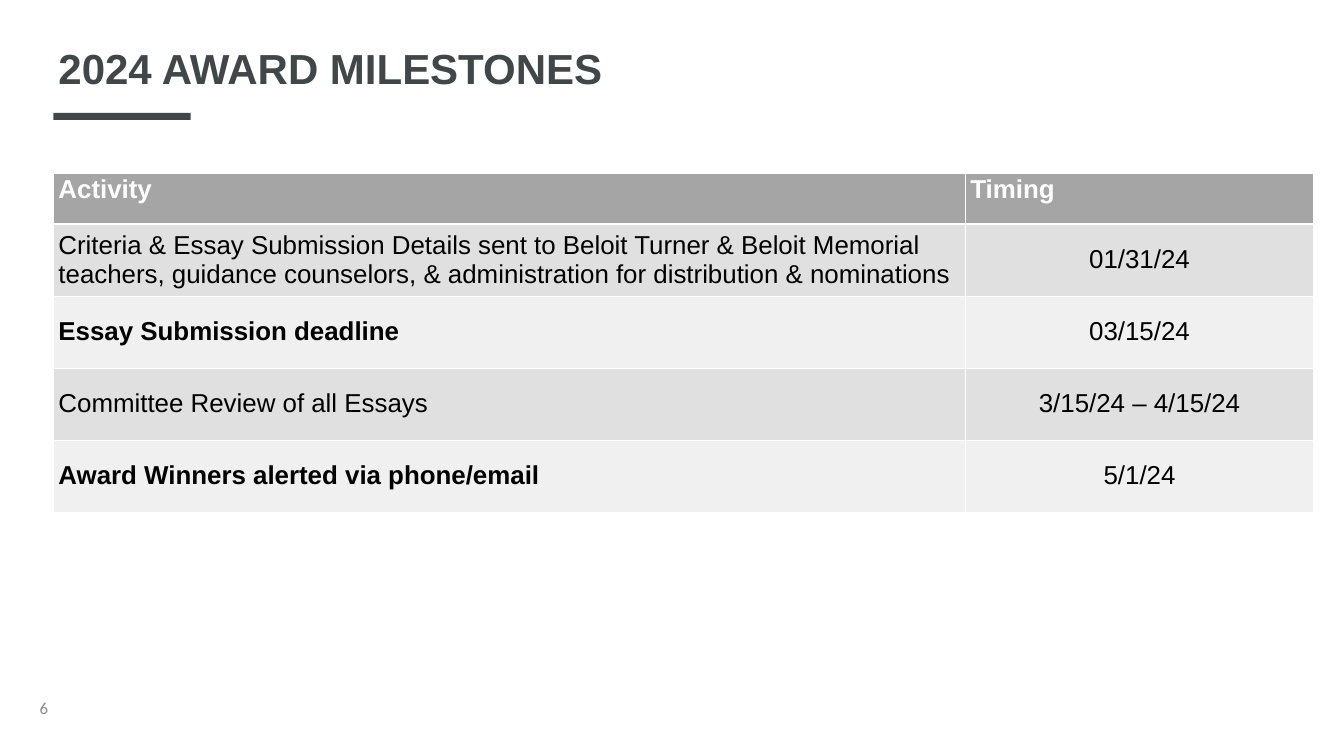
from lxml.etree import SubElement as Sub
from pptx import Presentation
from pptx.dml.color import RGBColor
from pptx.enum.shapes import MSO_SHAPE as Shape
from pptx.enum.text import MSO_ANCHOR as Anchor, PP_ALIGN as Align
from pptx.oxml.ns import qn
from pptx.util import Inches, Pt

SLATE = RGBColor(0x41, 0x47, 0x49)
GRAY = RGBColor(0x88, 0x88, 0x88)
HEAD = RGBColor(0xA5, 0xA5, 0xA5)
DARK = RGBColor(0xE0, 0xE0, 0xE0)
LIGHT = RGBColor(0xF0, 0xF0, 0xF0)
WHITE = RGBColor(0xFF, 0xFF, 0xFF)
BLACK = RGBColor(0, 0, 0)

LEFT = 1.06
COLS = [18.09, 6.91]
ROWS = [1.01] + [1.43] * 4
# Activity, timing, bold activity
DATA = [
    ("Activity", "Timing", True),
    ("Criteria & Essay Submission Details sent to Beloit Turner & Beloit Memorial "
     "teachers, guidance counselors, & administration for distribution & nominations",
     "01/31/24", False),
    ("Essay Submission deadline", "03/15/24", True),
    ("Committee Review of all Essays", "3/15/24 – 4/15/24", False),
    ("Award Winners alerted via phone/email", "5/1/24", True),
]


def add_run(par, text, size, color, bold=False, face="Arial"):
    run = par.add_run()
    run.text = text
    font = run.font
    font.name, font.size, font.bold = face, Pt(size), bold
    font.color.rgb = color


def add_text(slide, box, text, size, color, **style):
    frame = slide.shapes.add_textbox(*map(Inches, box)).text_frame
    frame.word_wrap = True
    frame.vertical_anchor = Anchor.MIDDLE
    par = frame.paragraphs[0]
    add_run(par, text, size, color, **style)
    return par


def add_bar(slide, box):
    bar = slide.shapes.add_shape(Shape.RECTANGLE, *map(Inches, box))
    bar.shadow.inherit = False
    bar.fill.solid()
    bar.fill.fore_color.rgb = SLATE
    bar.line.fill.background()


def set_edges(cell, top, bottom):
    props = cell._tc.get_or_add_tcPr()
    for side, width in zip("LRTB", (1, 1, top, bottom)):
        line = Sub(props, qn(f"a:ln{side}"), w=str(Pt(width)))
        Sub(Sub(line, qn("a:solidFill")), qn("a:srgbClr"), val=str(WHITE))


def fill_cell(cell, text, row, center, bold):
    head = row == 0
    set_edges(cell, 3 if row == 1 else 1, 3 if head else 1)
    cell.fill.solid()
    cell.fill.fore_color.rgb = HEAD if head else DARK if row % 2 else LIGHT
    cell.vertical_anchor = Anchor.TOP if head else Anchor.MIDDLE
    par = cell.text_frame.paragraphs[0]
    par.alignment = Align.CENTER if center else Align.LEFT
    add_run(par, text, 37, WHITE if head else BLACK, bold)


def add_grid(slide):
    box = LEFT, 3.43, sum(COLS), sum(ROWS)
    grid = slide.shapes.add_table(len(ROWS), len(COLS), *map(Inches, box)).table
    for col, width in zip(grid.columns, COLS):
        col.width = Inches(width)
    for row, height in zip(grid.rows, ROWS):
        row.height = Inches(height)
    for i, (task, time, bold) in enumerate(DATA):
        fill_cell(grid.cell(i, 0), task, i, False, bold)
        fill_cell(grid.cell(i, 1), time, i, i > 0, i == 0)


def main():
    deck = Presentation()
    deck.slide_width, deck.slide_height = Inches(26.66), Inches(15)
    slide = deck.slides.add_slide(deck.slide_layouts[6])

    # Page number
    add_text(slide, (0.69, 13.65, 6, 0.8), "6", 24, GRAY, face="Calibri")

    # Title with its underline
    add_bar(slide, (LEFT, 2.24, 2.72, 0.14))
    title = add_text(slide, (LEFT, 0.57, 22.99, 1.67), "2024 AWARD MILESTONES",
                     60, SLATE, bold=True)
    title.line_spacing = 0.9

    # Milestone table
    add_grid(slide)
    deck.save("out.pptx")


if __name__ == "__main__":
    main()
